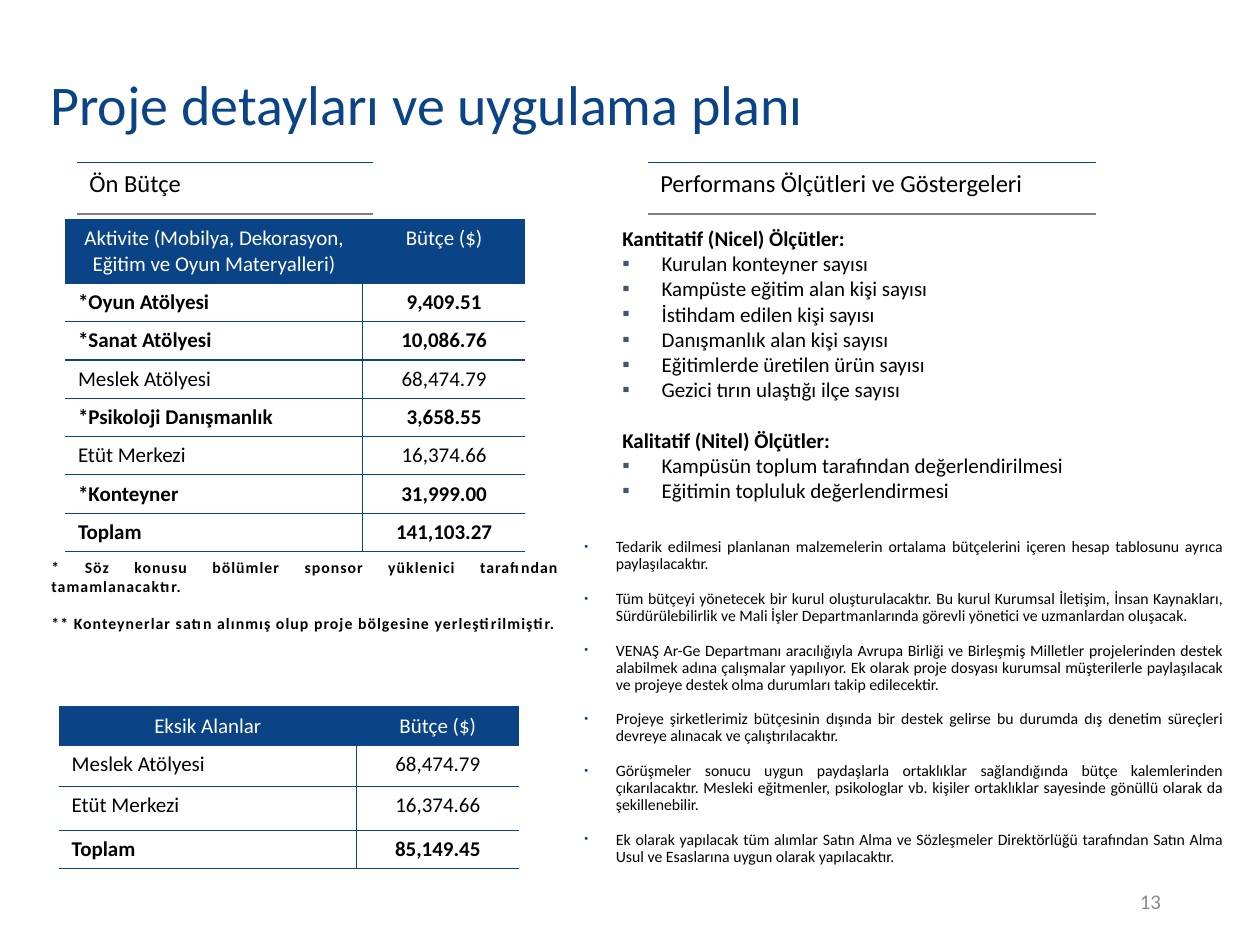
from lxml import etree
from pptx import Presentation
from pptx import util as u
from pptx.dml import color
from pptx.enum import text
from pptx.oxml import ns

NAVY, BLACK, WHITE, GREY, SLATE = "0A4386", "000000", "FFFFFF", "8C8C8C", "44546A"
HEADING_RULE = "7F7F7F"
LEFT, CENTER = text.PP_ALIGN.LEFT, text.PP_ALIGN.CENTER
RIGHT, JUSTIFY = text.PP_ALIGN.RIGHT, text.PP_ALIGN.JUSTIFY

BUDGET = [
    ("Aktivite (Mobilya, Dekorasyon, Eğitim ve Oyun Materyalleri)", "Bütçe ($)"),
    ("*Oyun Atölyesi", "9,409.51"),
    ("*Sanat Atölyesi", "10,086.76"),
    ("Meslek Atölyesi", "68,474.79"),
    ("*Psikoloji Danışmanlık", "3,658.55"),
    ("Etüt Merkezi", "16,374.66"),
    ("*Konteyner", "31,999.00"),
    ("Toplam", "141,103.27"),
]
MISSING = [
    ("Eksik Alanlar", "Bütçe ($)"),
    ("Meslek Atölyesi", "68,474.79"),
    ("Etüt Merkezi", "16,374.66"),
    ("Toplam", "85,149.45"),
]
MEASURES = [
    ("Kantitatif (Nicel) Ölçütler:", [
        "Kurulan konteyner sayısı",
        "Kampüste eğitim alan kişi sayısı",
        "İstihdam edilen kişi sayısı",
        "Danışmanlık alan kişi sayısı",
        "Eğitimlerde üretilen ürün sayısı",
        "Gezici tırın ulaştığı ilçe sayısı",
    ]),
    ("Kalitatif (Nitel) Ölçütler:", [
        "Kampüsün toplum tarafından değerlendirilmesi",
        "Eğitimin topluluk değerlendirmesi",
    ]),
]
PLAN = [
    "Tedarik edilmesi planlanan malzemelerin ortalama bütçelerini içeren hesap tablosunu ayrıca paylaşılacaktır.",
    "Tüm bütçeyi yönetecek bir kurul oluşturulacaktır. Bu kurul Kurumsal İletişim, İnsan Kaynakları, "
    "Sürdürülebilirlik ve Mali İşler Departmanlarında görevli yönetici ve uzmanlardan oluşacak.",
    "VENAŞ Ar-Ge Departmanı aracılığıyla Avrupa Birliği ve Birleşmiş Milletler projelerinden destek "
    "alabilmek adına çalışmalar yapılıyor. Ek olarak proje dosyası kurumsal müşterilerle paylaşılacak "
    "ve projeye destek olma durumları takip edilecektir.",
    "Projeye şirketlerimiz bütçesinin dışında bir destek gelirse bu durumda dış denetim süreçleri "
    "devreye alınacak ve çalıştırılacaktır.",
    "Görüşmeler sonucu uygun paydaşlarla ortaklıklar sağlandığında bütçe kalemlerinden çıkarılacaktır. "
    "Mesleki eğitmenler, psikologlar vb. kişiler ortaklıklar sayesinde gönüllü olarak da şekillenebilir.",
    "Ek olarak yapılacak tüm alımlar Satın Alma ve Sözleşmeler Direktörlüğü tarafından Satın Alma "
    "Usul ve Esaslarına uygun olarak yapılacaktır.",
]
FOOTNOTES = [
    "* Söz konusu bölümler sponsor yüklenici tarafından tamamlanacaktır.",
    "** Konteynerlar satın alınmış olup proje bölgesine yerleştirilmiştir.",
]


def rgb(value):
    return color.RGBColor.from_string(value)


def apply(target, values):
    for name, value in values.items():
        setattr(target, name, value)


def add_child(parent, tag, **attributes):
    return etree.SubElement(parent, ns.qn(tag), attributes)


def write(para, wording, size, ink=BLACK, bold=False, tracking=0, **layout):
    apply(para, layout)
    span = para.add_run()
    span.text = wording
    apply(span.font, {"name": "Calibri", "size": u.Pt(size), "bold": bold})
    span.font.color.rgb = rgb(ink)
    if tracking:
        span.font._element.set("spc", str(tracking))


def add_bullet(para, mark, ink, indent, percent=100):
    props = para._p.get_or_add_pPr()
    props.set("marL", str(u.Pt(indent)))
    props.set("indent", str(-u.Pt(indent)))
    add_child(add_child(props, "a:buClr"), "a:srgbClr", val=ink)
    add_child(props, "a:buSzPct", val=str(percent * 1000))
    add_child(props, "a:buFont", typeface="Arial")
    add_child(props, "a:buChar", char=mark)


def next_para(frame):
    first = frame.paragraphs[0]
    return frame.add_paragraph() if first.runs else first


def add_box(page, left, top, width, height, anchor=text.MSO_ANCHOR.TOP):
    box = page.shapes.add_textbox(u.Pt(left), u.Pt(top), u.Pt(width), u.Pt(height))
    apply(box.text_frame, {"word_wrap": True, "vertical_anchor": anchor})
    return box.text_frame


def set_borders(cell, width, **inks):
    props = cell._tc.get_or_add_tcPr()
    for side in "LRTB":
        line = add_child(props, f"a:ln{side}", w=str(u.Pt(width)))
        if side in inks:
            add_child(add_child(line, "a:solidFill"), "a:srgbClr", val=inks[side])
        else:
            add_child(line, "a:noFill")


def add_grid(page, left, top, widths, heights):
    frame = page.shapes.add_table(len(heights), len(widths), u.Pt(left), u.Pt(top),
                                  u.Pt(sum(widths)), u.Pt(sum(heights)))
    grid = frame.table
    apply(grid, {"first_row": False, "horz_banding": False})
    for column, width in zip(grid.columns, widths):
        column.width = u.Pt(width)
    for row, height in zip(grid.rows, heights):
        row.height = u.Pt(height)
    return grid


def add_heading(page, wording, left, width):
    cell = add_grid(page, left, 92.9, [width], [29.3]).cell(0, 0)
    set_borders(cell, 1, T=NAVY, B=HEADING_RULE)
    cell.fill.background()
    write(cell.text_frame.paragraphs[0], wording, 14)


def add_budget(page, rows, left, top, heights, bold_marks):
    grid = add_grid(page, left, top, [170, 92.8], heights)
    for r, row in enumerate(rows):
        header = r == 0
        bold = not header and row[0].startswith(bold_marks)
        for c, wording in enumerate(row):
            cell = grid.cell(r, c)
            inner = "L" if c else "R"
            set_borders(cell, 0.75, **{side: NAVY for side in ("T", "B", inner)})
            if header:
                cell.fill.solid()
                cell.fill.fore_color.rgb = rgb(NAVY)
            else:
                cell.fill.background()
            write(cell.text_frame.paragraphs[0], wording, 12, WHITE if header else BLACK, bold,
                  alignment=CENTER if header or c else LEFT)


def add_title(page, wording):
    title = page.shapes.title
    apply(title, {"left": u.Pt(21.6), "top": u.Pt(25.2), "width": u.Pt(520), "height": u.Pt(72.7)})
    apply(title.text_frame, {"word_wrap": True, "auto_size": text.MSO_AUTO_SIZE.NONE,
                             "vertical_anchor": text.MSO_ANCHOR.MIDDLE})
    write(title.text_frame.paragraphs[0], wording, 32, NAVY, alignment=LEFT, line_spacing=0.9)


def add_measures(page):
    frame = add_box(page, 348.5, 125.3, 334.8, 167)
    for index, (heading, items) in enumerate(MEASURES):
        gap = {"space_before": u.Pt(14.4)} if index else {}
        write(next_para(frame), heading, 12, bold=True, **gap)
        for item in items:
            para = next_para(frame)
            add_bullet(para, "▪", SLATE, 22.5)
            write(para, item, 12)


def add_plan(page):
    frame = add_box(page, 326.9, 304.6, 378.7, 200)
    for index, item in enumerate(PLAN):
        para = next_para(frame)
        add_bullet(para, "•", NAVY, 18, 70)
        write(para, item, 9, alignment=JUSTIFY, line_spacing=0.9, space_before=u.Pt(10 if index else 0))


def add_footnotes(page):
    frame = add_box(page, 22.3, 315.4, 303.8, 88.6)
    for index, note in enumerate(FOOTNOTES):
        write(next_para(frame), note, 9, bold=True, tracking=60, alignment=JUSTIFY,
              space_before=u.Pt(10 if index else 0))


def main():
    deck = Presentation()
    apply(deck, {"slide_width": u.Pt(720), "slide_height": u.Pt(540)})
    page = deck.slides.add_slide(deck.slide_layouts[5])
    add_title(page, "Proje detayları ve uygulama planı")
    add_heading(page, "Ön Bütçe", 43.9, 169.5)
    add_heading(page, "Performans Ölçütleri ve Göstergeleri", 370.1, 256.5)
    add_budget(page, BUDGET, 37.4, 125.5, [36.5] + [21.9] * 7, ("*", "Toplam"))
    add_measures(page)
    add_plan(page)
    add_footnotes(page)
    add_budget(page, MISSING, 33.8, 404, [21.9, 23.5, 25.1, 21.9], ("Toplam",))
    number = add_box(page, 508.5, 500.5, 162, 28.8, text.MSO_ANCHOR.MIDDLE)
    write(number.paragraphs[0], "13", 12, GREY, alignment=RIGHT)
    deck.save("out.pptx")


if __name__ == "__main__":
    main()
